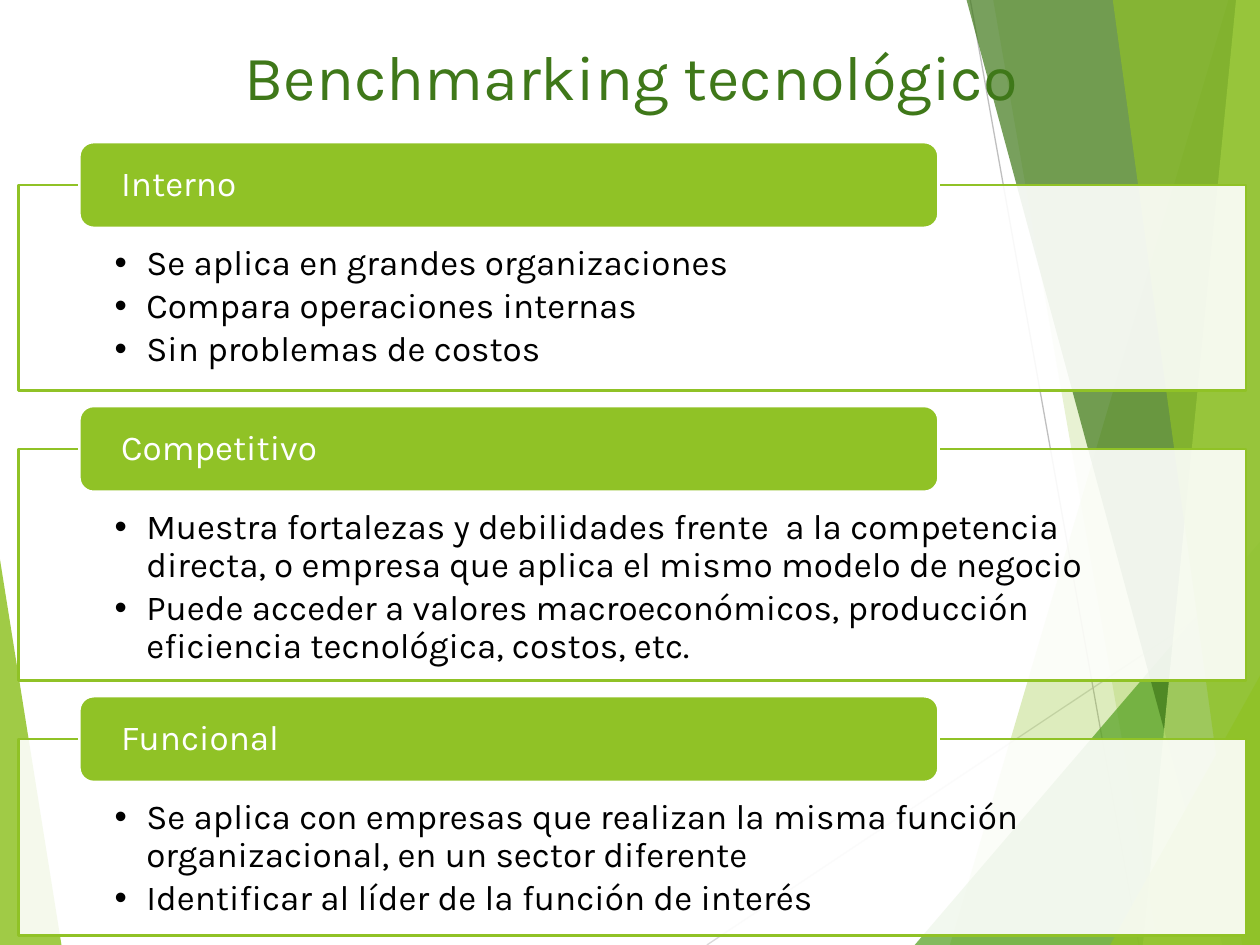
from dataclasses import dataclass

from lxml import etree
from pptx import Presentation
from pptx import util as u
from pptx.dml.color import RGBColor
from pptx.enum import shapes, text
from pptx.oxml.ns import qn

FONT = "Karla"
COLORS = {
    "lime": "90C226",
    "leaf": "54A021",
    "forest": "3F7819",
    "pale": "C0E474",
    "white": "FFFFFF",
    "black": "000000",
    "silver": "D9D9D9",
    "gray": "BFBFBF",
}

# All lengths are in centimetres.
TOP, RIGHT, BOTTOM = -0.02, 25.42, 19.05
CARD_LEFT, CARD_WIDTH, CARD_GAP, FIRST_CARD_TOP = 0.38, 24.74, 1.18, 3.73
TAB_LEFT, TAB_WIDTH, TAB_HEIGHT = 1.6, 17.32, 1.73


@dataclass
class Facet:
    color: str
    alpha: int
    points: list[tuple[float, float]]


@dataclass
class Ray:
    color: str
    start: tuple[float, float]
    end: tuple[float, float]


@dataclass
class Card:
    heading: str
    bullets: list[str]
    height: float


def band(color: str, alpha: int, top_x: float, bottom_x: float) -> Facet:
    """Full-height facet from a slanted left side to the right edge."""
    return Facet(color, alpha, [(top_x, TOP), (bottom_x, BOTTOM), (RIGHT, BOTTOM), (RIGHT, TOP)])


def corner(color: str, alpha: int, bottom_x: float, right_y: float) -> Facet:
    """Triangle in the bottom right corner."""
    return Facet(color, alpha, [(bottom_x, BOTTOM), (RIGHT, right_y), (RIGHT, BOTTOM)])


BACKDROP = [
    Facet("lime", 85, [(TOP, 11.15), (1.24, BOTTOM), (TOP, BOTTOM)]),
    Ray("silver", (14.25, BOTTOM), (RIGHT, 11.61)),
    Ray("gray", (19.56, 0), (22.96, BOTTOM)),
    band("lime", 30, 24.77, 19.15),
    band("lime", 20, 20.02, 23.34),
    corner("leaf", 72, 18.44, 10.9),
    band("forest", 70, 19.48, 24.64),
    band("pale", 70, 24.92, 23.04),
    band("lime", 65, 22.43, 25.04),
    corner("lime", 80, 22.38, 13.59),
]

CARDS = [
    Card("Interno", [
        "Se aplica en grandes organizaciones",
        "Compara operaciones internas",
        "Sin problemas de costos",
    ], 4.14),
    Card("Competitivo", [
        "Muestra fortalezas y debilidades frente  a la competencia directa, "
        "o empresa que aplica el mismo modelo de negocio",
        "Puede acceder a valores macroeconómicos, producción "
        "eficiencia tecnológica, costos, etc.",
    ], 4.67),
    Card("Funcional", [
        "Se aplica con empresas que realizan la misma función "
        "organizacional, en un sector diferente",
        "Identificar al líder de la función de interés",
    ], 3.96),
]


def rgb(name: str) -> RGBColor:
    return RGBColor.from_string(COLORS[name])


def set_fill(sp, color: str, alpha: int = 100) -> None:
    sp.shadow.inherit = False
    sp.fill.solid()
    sp.fill.fore_color.rgb = rgb(color)
    if alpha < 100:
        clr = sp._element.spPr.find(qn("a:solidFill"))[0]
        etree.SubElement(clr, qn("a:alpha")).set("val", str(alpha * 1000))


def add_bullet(p) -> None:
    pPr = p._p.get_or_add_pPr()
    pPr.set("marL", str(u.Cm(0.64)))
    pPr.set("indent", str(-u.Cm(0.64)))
    etree.SubElement(pPr, qn("a:buFont")).set("typeface", "Arial")
    etree.SubElement(pPr, qn("a:buChar")).set("char", "•")


def write(sp, lines: list[str], *, color: str, size: int = 20, align=text.PP_ALIGN.LEFT,
          anchor=text.MSO_ANCHOR.MIDDLE, insets=(0.25, 0.13, 0.25, 0.13),
          line_spacing: float = 0.9, after: int = 0, bullets: bool = False) -> None:
    """Fill a shape with paragraphs; insets are left, top, right, bottom."""
    tf = sp.text_frame
    tf.word_wrap = True
    tf.vertical_anchor = anchor
    tf.margin_left, tf.margin_top, tf.margin_right, tf.margin_bottom = map(u.Cm, insets)
    for i, line in enumerate(lines):
        p = tf.paragraphs[0] if i == 0 else tf.add_paragraph()
        p.alignment = align
        p.line_spacing = line_spacing
        p.space_after = u.Pt(after)
        if bullets:
            add_bullet(p)
        r = p.add_run()
        r.text = line
        r.font.name = FONT
        r.font.size = u.Pt(size)
        r.font.color.rgb = rgb(color)


def draw_facet(s, facet: Facet) -> None:
    points = [(u.Cm(x), u.Cm(y)) for x, y in facet.points]
    fb = s.shapes.build_freeform(*points[0])
    fb.add_line_segments(points[1:], close=True)
    sp = fb.convert_to_shape()
    set_fill(sp, facet.color, facet.alpha)
    sp.line.fill.background()


def draw_ray(s, ray: Ray) -> None:
    ends = [u.Cm(v) for v in ray.start + ray.end]
    cx = s.shapes.add_connector(shapes.MSO_CONNECTOR.STRAIGHT, *ends)
    cx.line.color.rgb = rgb(ray.color)
    cx.line.width = u.Pt(0.75)
    etree.SubElement(cx._element.spPr, qn("a:effectLst"))


def draw_box(s, kind, box: tuple[float, ...], fill: str, line: str, alpha: int = 100):
    sp = s.shapes.add_shape(kind, *map(u.Cm, box))
    set_fill(sp, fill, alpha)
    sp.line.color.rgb = rgb(line)
    sp.line.width = u.Pt(1.5)
    return sp


def draw_card(s, card: Card, top: float) -> None:
    """Bulleted panel with a heading tab centred on its top edge."""
    panel = draw_box(s, shapes.MSO_SHAPE.RECTANGLE,
                     (CARD_LEFT, top, CARD_WIDTH, card.height), "white", "lime", 90)
    write(panel, card.bullets, color="black", anchor=text.MSO_ANCHOR.TOP,
          insets=(1.93, 1.22, 1.93, 0.41), after=3, bullets=True)
    tab = draw_box(s, shapes.MSO_SHAPE.ROUNDED_RECTANGLE,
                   (TAB_LEFT, top - TAB_HEIGHT / 2, TAB_WIDTH, TAB_HEIGHT), "lime", "white")
    write(tab, [card.heading], color="white", insets=(0.76, 0, 0.76, 0))


def main() -> None:
    prs = Presentation()
    prs.slide_width, prs.slide_height = u.Cm(25.4), u.Cm(19.05)
    s = prs.slides.add_slide(prs.slide_layouts[6])

    for part in BACKDROP:
        if isinstance(part, Ray):
            draw_ray(s, part)
        else:
            draw_facet(s, part)

    title = s.shapes.add_textbox(u.Cm(1.3), u.Cm(0.33), u.Cm(22.86), u.Cm(2.39))
    write(title, ["Benchmarking tecnológico"], color="forest", size=36,
          align=text.PP_ALIGN.CENTER, line_spacing=1.0)

    top = FIRST_CARD_TOP
    for card in CARDS:
        draw_card(s, card, top)
        top += card.height + CARD_GAP

    prs.save("out.pptx")


if __name__ == "__main__":
    main()
